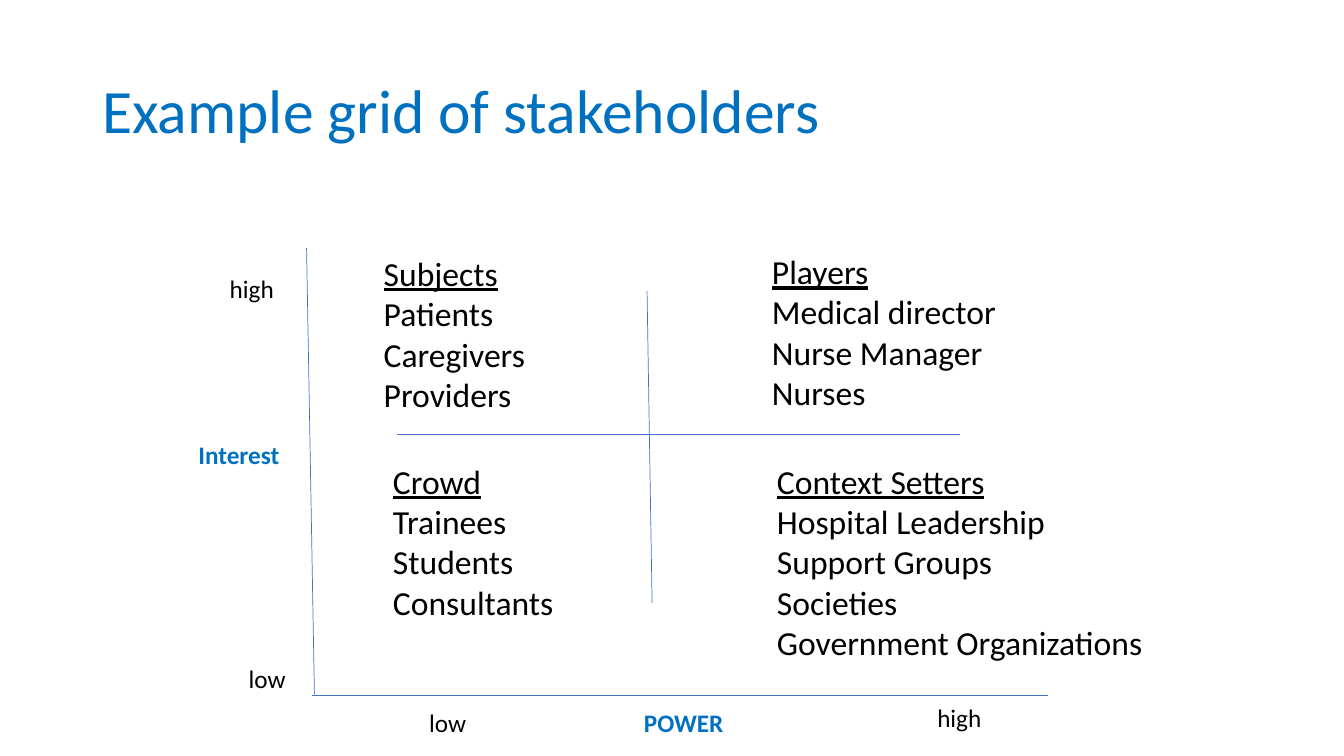
from pptx import Presentation
from pptx import util as u
from pptx.dml.color import RGBColor
from pptx.enum import shapes, text
from pptx.oxml.ns import qn
from lxml import etree

BLACK = RGBColor(0x00, 0x00, 0x00)
BLUE = RGBColor(0x00, 0x70, 0xC0)
AXIS_BLUE = RGBColor(0x44, 0x72, 0xC4)


class GridSlide:
    font = "Calibri"
    label_size = 18
    group_size = 24

    def __init__(self, deck):
        self.slide = deck.slides.add_slide(deck.slide_layouts[6])

    def frame(self, left, top, width, height, wrap):
        box = self.slide.shapes.add_textbox(
            u.Pt(left), u.Pt(top), u.Pt(width), u.Pt(height))
        box.text_frame.word_wrap = wrap
        return box.text_frame

    def run(self, paragraph, words, size, color=BLACK, bold=False, underline=False):
        run = paragraph.add_run()
        run.text = words
        run.font.name = self.font
        run.font.size = u.Pt(size)
        run.font.color.rgb = color
        run.font.bold = bold
        run.font.underline = underline

    def title(self, words, left, top, width, height):
        frame = self.frame(left, top, width, height, True)
        frame.vertical_anchor = text.MSO_ANCHOR.MIDDLE
        frame.paragraphs[0].line_spacing = 0.9
        self.run(frame.paragraphs[0], words, 44, BLUE)

    def group(self, heading, members, left, top, width, height):
        frame = self.frame(left, top, width, height, False)
        frame.auto_size = text.MSO_AUTO_SIZE.SHAPE_TO_FIT_TEXT
        self.run(frame.paragraphs[0], heading, self.group_size, underline=True)
        for member in members:
            self.run(frame.add_paragraph(), member, self.group_size)

    def label(self, words, left, top, width, color=BLACK, bold=False):
        frame = self.frame(left, top, width, 29, False)
        frame.auto_size = text.MSO_AUTO_SIZE.SHAPE_TO_FIT_TEXT
        self.run(frame.paragraphs[0], words, self.label_size, color, bold)

    def axis_name(self, words, left, top, width):
        self.label(words, left, top, width, BLUE, True)

    def line(self, x1, y1, x2, y2):
        line = self.slide.shapes.add_connector(
            shapes.MSO_CONNECTOR.STRAIGHT, u.Pt(x1), u.Pt(y1), u.Pt(x2), u.Pt(y2))
        line.line.color.rgb = AXIS_BLUE
        line.line.width = u.Pt(0.5)
        etree.SubElement(line._element.spPr, qn("a:effectLst"))


def main():
    deck = Presentation()
    deck.slide_width = u.Pt(960)
    deck.slide_height = u.Pt(540)
    grid = GridSlide(deck)

    grid.title("Example grid of stakeholders", 66, 29, 828, 104.4)

    grid.group("Subjects", ["Patients", "Caregivers", "Providers"],
               267, 177, 116.6, 123.8)
    grid.group("Players", ["Medical director", "Nurse Manager", "Nurses"],
               544.3, 175.7, 176.4, 123.8)
    grid.group("Crowd", ["Trainees", "Students", "Consultants"],
               273.6, 325.4, 130.3, 123.8)
    grid.group("Context Setters",
               ["Hospital Leadership", "Support Groups", "Societies",
                "Government Organizations"],
               547.9, 325.4, 278, 181.4)

    grid.line(219, 177, 224.6, 496)
    grid.line(223.2, 496.8, 748.8, 496.8)

    grid.label("high", 157, 191.5, 46.8)
    grid.label("low", 170.6, 470.2, 41.5)
    grid.label("low", 299.5, 501.8, 41.5)
    grid.label("high", 662.4, 498.2, 46.8)
    grid.axis_name("POWER", 452.9, 501.8, 72)
    grid.axis_name("Interest", 134.6, 310.3, 72.7)

    grid.line(462.2, 208, 465.8, 430.6)
    grid.line(283.7, 310.3, 685.4, 310.3)

    deck.save("out.pptx")


if __name__ == "__main__":
    main()
